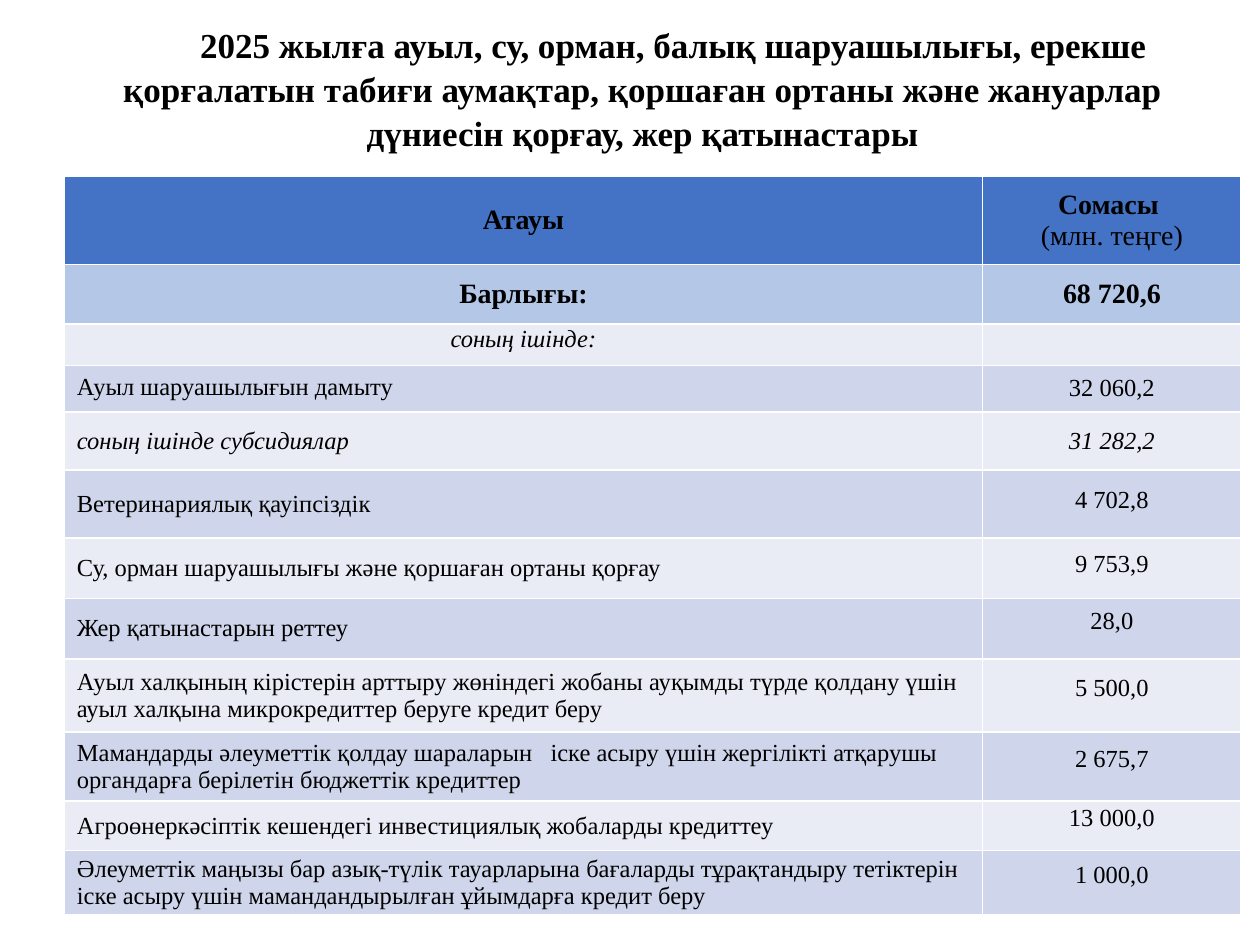
from pptx import Presentation
from pptx.dml.color import RGBColor
from pptx.enum.text import MSO_ANCHOR, PP_ALIGN
from pptx.util import Inches, Pt

MID, LOW = MSO_ANCHOR.MIDDLE, MSO_ANCHOR.BOTTOM
LEFT, CENTER = PP_ALIGN.LEFT, PP_ALIGN.CENTER
HEAD, TOTAL, BANDS = "4472C4", "B4C7E7", ("CFD5EA", "E9EBF5")

TITLE = ("2025 жылға ауыл, су, орман, балық шаруашылығы, ерекше қорғалатын "
         "табиғи аумақтар, қоршаған ортаны және жануарлар дүниесін қорғау, "
         "жер қатынастары")

ITEMS = [
    ("Ауыл шаруашылығын дамыту", "32 060,2", 0.37, 0),
    ("соның ішінде субсидиялар", "31 282,2", 0.46, 0),
    ("Ветеринариялық қауіпсіздік", "4 702,8", 0.54, 0.06),
    ("Су, орман шаруашылығы және қоршаған ортаны қорғау", "9 753,9", 0.48, 0.06),
    ("Жер қатынастарын реттеу", "28,0", 0.48, 0.12),
    ("Ауыл халқының кірістерін арттыру жөніндегі жобаны ауқымды түрде қолдану "
     "үшін ауыл халқына микрокредиттер беруге кредит беру", "5 500,0", 0.58, 0.12),
    ("Мамандарды әлеуметтік қолдау шараларын   іске асыру үшін жергілікті "
     "атқарушы органдарға берілетін бюджеттік кредиттер", "2 675,7", 0.55, 0.12),
    ("Агроөнеркәсіптік кешендегі инвестициялық жобаларды кредиттеу",
     "13 000,0", 0.39, 0.12),
    ("Әлеуметтік маңызы бар азық-түлік тауарларына бағаларды тұрақтандыру "
     "тетіктерін іске асыру үшін мамандандырылған ұйымдарға кредит беру",
     "1 000,0", 0.51, 0.12),
]


def color(code):
    return RGBColor.from_string(code)


class Page:
    font = "Times New Roman"
    ink = "000000"

    def __init__(self, deck):
        self.slide = deck.slides.add_slide(deck.slide_layouts[6])

    def label(self, par, text, size, align=CENTER, bold=False, italic=False):
        par.alignment = align
        run = par.add_run()
        run.text = text
        style = {"name": self.font, "size": Pt(size), "bold": bold, "italic": italic}
        for key, value in style.items():
            setattr(run.font, key, value)
        run.font.color.rgb = color(self.ink)

    def indent(self, par, **gaps):
        props = par._p.get_or_add_pPr()
        for key, value in gaps.items():
            props.set(key, str(Inches(value)))

    def title(self, text, box):
        frame = self.slide.shapes.add_textbox(*map(Inches, box)).text_frame
        style = {"word_wrap": True, "margin_left": Inches(0.07),
                 "margin_right": Inches(0.07), "margin_top": Inches(0.04),
                 "margin_bottom": Inches(0.04)}
        for key, value in style.items():
            setattr(frame, key, value)
        par = frame.paragraphs[0]
        par.line_spacing = 1.05
        self.label(par, text, 20, bold=True)
        self.indent(par, marL=0, indent=0.49)

    def table(self, left, top, widths, heights):
        size = (len(heights), len(widths))
        box = (left, top, sum(widths), sum(heights))
        grid = self.slide.shapes.add_table(*size, *map(Inches, box)).table
        for col, width in zip(grid.columns, widths):
            col.width = Inches(width)
        for row, height in zip(grid.rows, heights):
            row.height = Inches(height)
        return grid

    def cell(self, cell, fill, lines=(), size=14, anchor=MID, base=0, left=0, **look):
        style = {"margin_left": 0, "margin_top": 0, "margin_right": 0,
                 "margin_bottom": Inches(base), "vertical_anchor": anchor}
        for key, value in style.items():
            setattr(cell, key, value)
        cell.fill.solid()
        cell.fill.fore_color.rgb = color(fill)
        frame = cell.text_frame
        for num, (text, bold) in enumerate(lines):
            par = frame.add_paragraph() if num else frame.paragraphs[0]
            self.label(par, text, size, bold=bold, **look)
            if left:
                self.indent(par, marL=left, indent=0)


def main():
    deck = Presentation()
    deck.slide_width, deck.slide_height = Inches(10), Inches(7.5)
    page = Page(deck)
    page.title(TITLE, (0.37, 0.13, 9.46, 1.27))

    heights = [0.7, 0.47, 0.33] + [item[2] for item in ITEMS]
    grid = page.table(0.51, 1.4, (7.29, 2.05), heights)
    page.cell(grid.cell(0, 0), HEAD, [("Атауы", True)], 16)
    page.cell(grid.cell(0, 1), HEAD, [("Сомасы ", True), ("(млн. теңге)", False)], 16)
    page.cell(grid.cell(1, 0), TOTAL, [("Барлығы:", True)], 16)
    page.cell(grid.cell(1, 1), TOTAL, [("68 720,6", True)], 16)
    page.cell(grid.cell(2, 0), BANDS[1], [("соның ішінде:", False)], base=0.09, italic=True)
    page.cell(grid.cell(2, 1), BANDS[1])

    for num, (name, cost, _, base) in enumerate(ITEMS):
        fill, first, sub = BANDS[num % 2], num == 0, num == 1
        page.cell(grid.cell(num + 3, 0), fill, [(name, False)], left=0.1, align=LEFT,
                  anchor=LOW if first else MID, base=0.09 if first else 0, italic=sub)
        page.cell(grid.cell(num + 3, 1), fill, [(cost, False)], base=base, italic=sub)

    deck.save("out.pptx")


if __name__ == "__main__":
    main()
